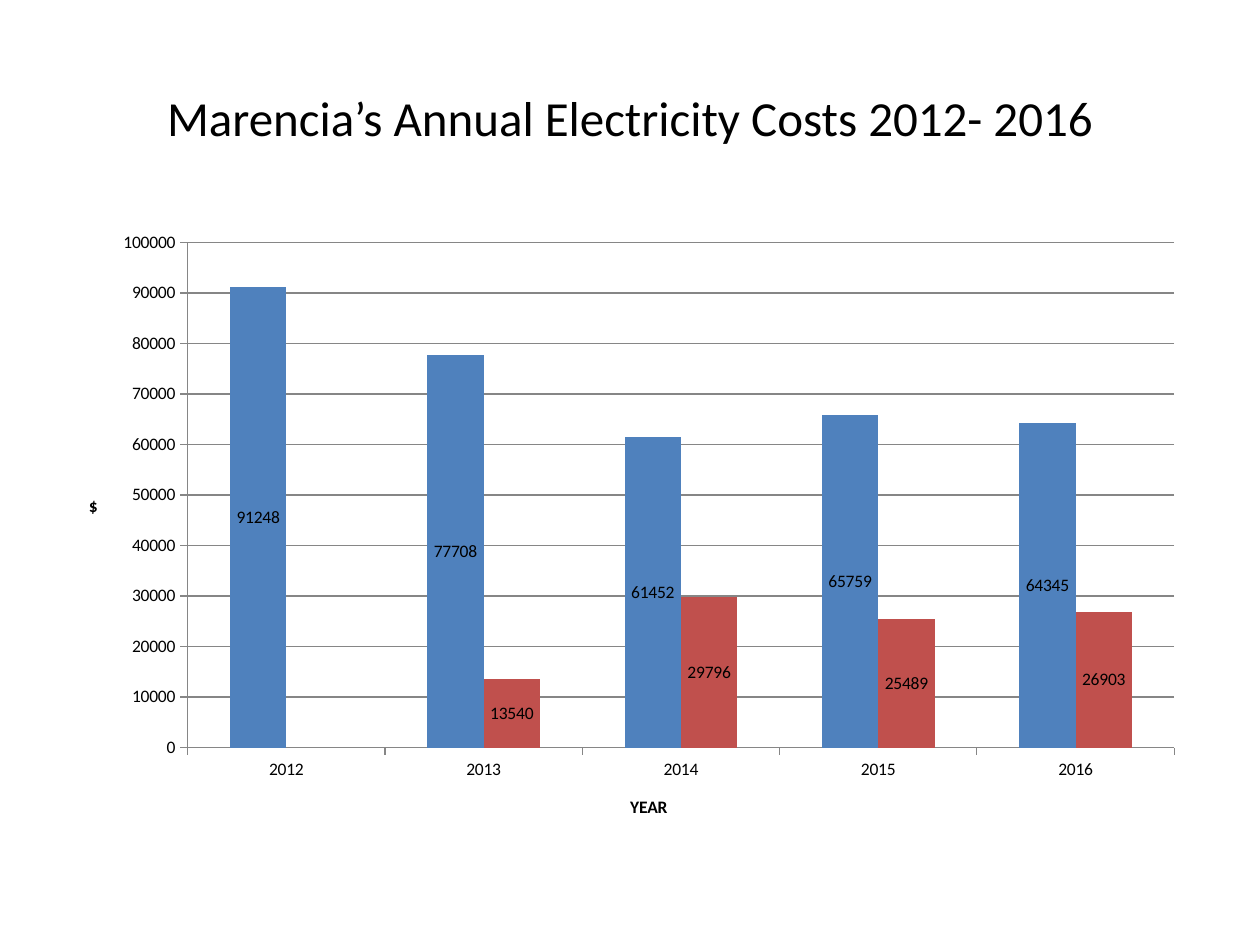
from lxml import etree
from pptx import Presentation
from pptx import util as u
from pptx.chart.data import CategoryChartData
from pptx.dml.color import RGBColor
from pptx.enum import chart as charts, text
from pptx.oxml.ns import qn

BLACK = RGBColor(0x00, 0x00, 0x00)
GREY = RGBColor(0x86, 0x86, 0x86)
BLUE = RGBColor(0x4F, 0x81, 0xBD)
RED = RGBColor(0xC0, 0x50, 0x4D)

YEARS = ["2012", "2013", "2014", "2015", "2016"]
COSTS = [
    ("Series 1", [91248, 77708, 61452, 65759, 64345], BLUE),
    ("Series 2", [None, 13540, 29796, 25489, 26903], RED),
]


class PageBuilder:
    font_name = "Calibri"
    title_size = u.Pt(28)
    chart_size = u.Pt(10)
    left, width = u.Cm(1.27), u.Cm(22.86)

    def __init__(self, page):
        self.page = page

    def style(self, font, size, bold=False):
        font.name = self.font_name
        font.size = size
        font.bold = bold
        font.color.rgb = BLACK

    def title(self, words, top, height):
        box = self.page.shapes.add_textbox(self.left, top, self.width, height)
        frame = box.text_frame
        frame.word_wrap = True
        frame.vertical_anchor = text.MSO_ANCHOR.MIDDLE
        para = frame.paragraphs[0]
        para.alignment = text.PP_ALIGN.CENTER
        span = para.add_run()
        span.text = words
        self.style(span.font, self.title_size)

    def axis(self, axis, words):
        axis.major_tick_mark = charts.XL_TICK_MARK.OUTSIDE
        axis.minor_tick_mark = charts.XL_TICK_MARK.NONE
        axis.format.line.color.rgb = GREY
        axis.format.line.width = u.Pt(0.75)
        frame = axis.axis_title.text_frame
        span = frame.paragraphs[0].add_run()
        span.text = words
        self.style(span.font, self.chart_size, bold=True)
        return frame

    def place_plot(self, chart, **fractions):
        """Fix the inner plot area, in fractions of the chart's size."""
        area = chart.element.find(".//" + qn("c:plotArea"))
        layout = area.find(qn("c:layout"))
        if layout is None:
            layout = etree.Element(qn("c:layout"))
            area.insert(0, layout)
        manual = etree.SubElement(layout, qn("c:manualLayout"))
        settings = {"layoutTarget": "inner", "xMode": "edge", "yMode": "edge", **fractions}
        for name, value in settings.items():
            etree.SubElement(manual, qn("c:" + name), val=str(value))

    def column_chart(self, categories, rows, top, height):
        data = CategoryChartData(number_format="General")
        data.categories = categories
        for name, values, _ in rows:
            data.add_series(name, values)
        chart = self.page.shapes.add_chart(
            charts.XL_CHART_TYPE.COLUMN_CLUSTERED, self.left, top, self.width, height, data
        ).chart
        self.style(chart.font, self.chart_size)
        chart.has_legend = False
        chart.has_title = False

        plot = chart.plots[0]
        plot.gap_width = 150
        plot.overlap = 0
        plot.vary_by_categories = False
        for series, (_, _, color) in zip(plot.series, rows):
            series.format.fill.solid()
            series.format.fill.fore_color.rgb = color
            labels = series.data_labels
            labels.show_value = True
            labels.position = charts.XL_LABEL_POSITION.CENTER
            self.style(labels.font, self.chart_size)

        self.axis(chart.category_axis, "YEAR")
        value_axis = chart.value_axis
        upright = self.axis(value_axis, "$")
        upright._txBody.bodyPr.set("rot", "0")
        value_axis.minimum_scale = 0
        value_axis.maximum_scale = 100000
        value_axis.major_unit = 10000
        value_axis.has_major_gridlines = True
        value_axis.major_gridlines.format.line.color.rgb = GREY
        value_axis.major_gridlines.format.line.width = u.Pt(0.75)
        self.place_plot(chart, x=0.11, y=0.035, w=0.87, h=0.81)


def main():
    deck = Presentation()
    deck.slide_width, deck.slide_height = u.Cm(25.4), u.Cm(19.05)
    builder = PageBuilder(deck.slides.add_slide(deck.slide_layouts[6]))
    builder.title("Marencia’s Annual Electricity Costs 2012- 2016", u.Cm(0.76), u.Cm(3.18))
    builder.column_chart(YEARS, COSTS, u.Cm(4.45), u.Cm(12.57))
    deck.save("out.pptx")


if __name__ == "__main__":
    main()
